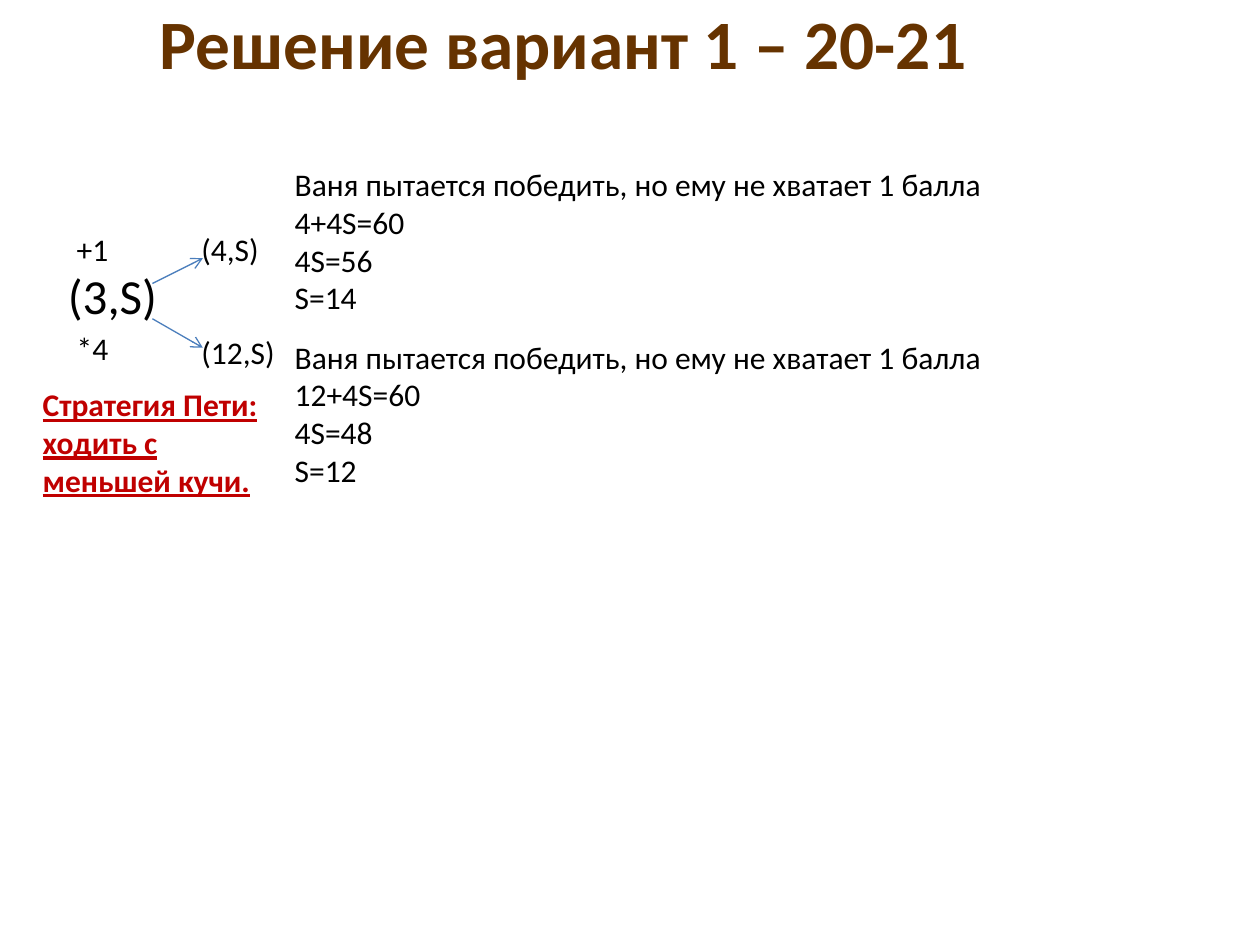
from pptx import Presentation
from pptx.dml.color import RGBColor
from pptx.enum import shapes, text
from pptx.oxml import ns, xmlchemy
from pptx.util import Inches, Pt

TITLE = "Решение вариант 1 – 20-21"
HINT = "Ваня пытается победить, но ему не хватает 1 балла"
PLAIN = {"size": Pt(18), "name": "Calibri"}
LARGE = {**PLAIN, "size": Pt(28)}
STRATEGY = {**PLAIN, "bold": True, "underline": True}
HEADING = {"size": Pt(39.6), "name": "Calibri", "bold": True}

# lines, (left, top, width, height), wrap, font format, colour
TEXTS = [
    (["(3,S)"], (0.44, 2.06, 0.92, 0.57), False, LARGE, "000000"),
    (["(12,S)"], (1.5, 2.59, 0.82, 0.4), True, PLAIN, "000000"),
    (["(4,S)"], (1.5, 1.78, 0.66, 0.4), False, PLAIN, "000000"),
    ([HINT, "4+4S=60", "4S=56", "S=14"], (2.24, 1.26, 5.71, 1.31), False, PLAIN, "000000"),
    (["+1"], (0.51, 1.78, 0.7, 0.4), True, PLAIN, "000000"),
    (["*4"], (0.51, 2.56, 0.7, 0.4), True, PLAIN, "000000"),
    ([HINT, "12+4S=60", "4S=48", "S=12"], (2.24, 2.63, 5.71, 1.31), False, PLAIN, "000000"),
    (["Стратегия Пети: ходить с меньшей кучи."], (0.24, 3.01, 1.96, 1.01), True, STRATEGY, "C00000"),
]
ARROWS = [(1.21, 2.25, 1.61, 2.05), (1.21, 2.53, 1.61, 2.76)]


def rgb(value):
    return RGBColor.from_string(value)


def write(frame, lines, font_format, color, align):
    for index, line in enumerate(lines):
        para = frame.paragraphs[0] if index == 0 else frame.add_paragraph()
        para.alignment = align
        span = para.add_run()
        span.text = line
        for name, value in font_format.items():
            setattr(span.font, name, value)
        span.font.color.rgb = rgb(color)


def add_title(page):
    title = page.shapes.title
    title.left, title.top, title.width, title.height = map(Inches, (-0.03, 0, 9, 1.25))
    frame = title.text_frame
    frame.vertical_anchor = text.MSO_ANCHOR.TOP
    frame.margin_top = 0
    write(frame, [TITLE], HEADING, "663300", text.PP_ALIGN.CENTER)


def add_text(page, lines, place, wrap, font_format, color):
    frame = page.shapes.add_textbox(*map(Inches, place)).text_frame
    frame.word_wrap = wrap
    frame.auto_size = text.MSO_AUTO_SIZE.SHAPE_TO_FIT_TEXT
    write(frame, lines, font_format, color, text.PP_ALIGN.LEFT)


def add_arrow(page, ends):
    arrow = page.shapes.add_connector(shapes.MSO_CONNECTOR.STRAIGHT, *map(Inches, ends))
    arrow.line.color.rgb = rgb("4B7EBC")
    arrow.line.width = Pt(0.75)
    head = xmlchemy.OxmlElement("a:tailEnd")
    head.set("type", "arrow")
    arrow.line._get_or_add_ln().append(head)
    arrow._element.find(ns.qn("p:spPr")).append(xmlchemy.OxmlElement("a:effectLst"))


def main():
    deck = Presentation()
    deck.slide_width, deck.slide_height = Inches(10), Inches(7.5)
    page = deck.slides.add_slide(deck.slide_layouts.get_by_name("Title Only"))
    add_title(page)
    for item in TEXTS:
        add_text(page, *item)
    for ends in ARROWS:
        add_arrow(page, ends)
    deck.save("out.pptx")


if __name__ == "__main__":
    main()
